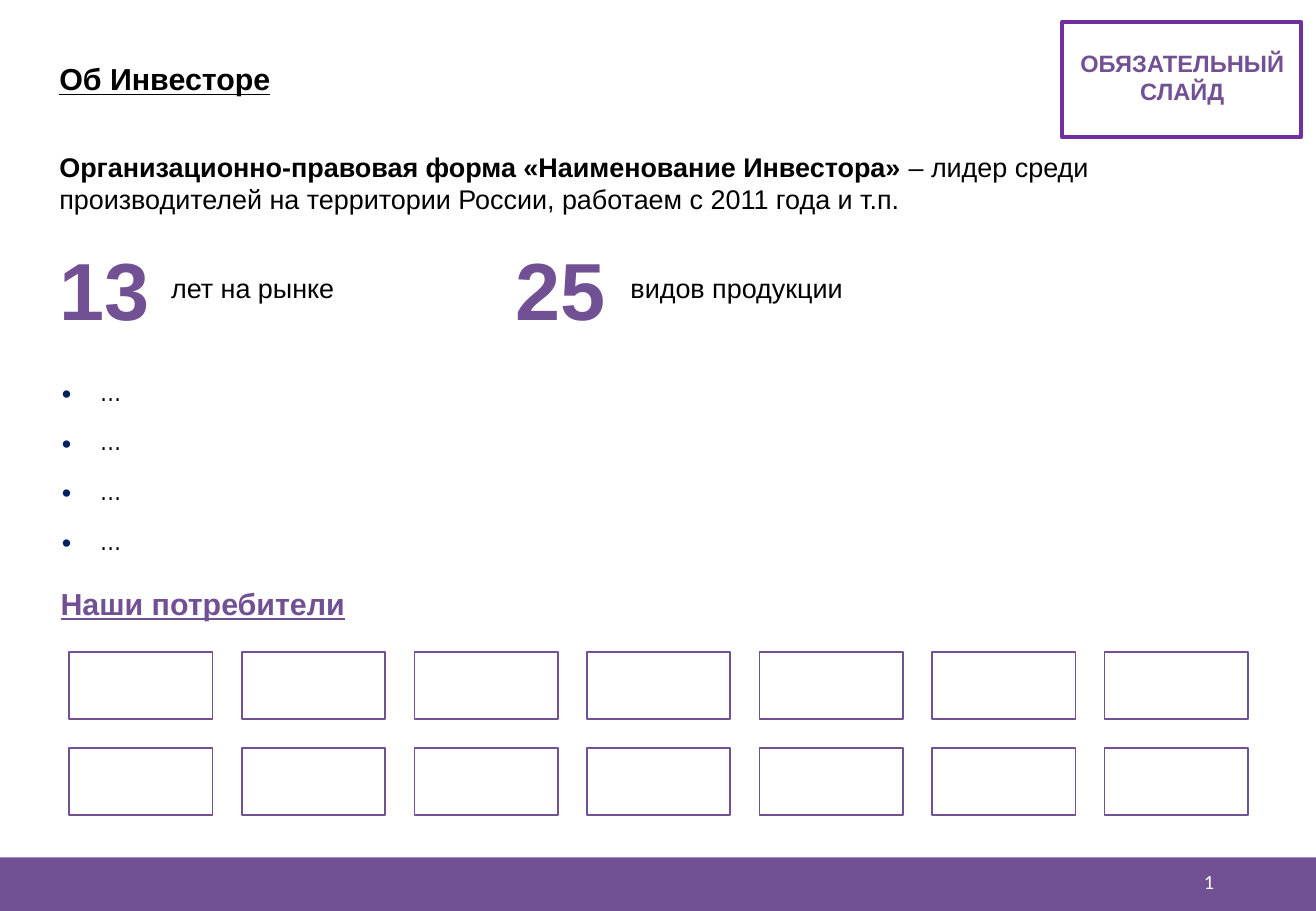
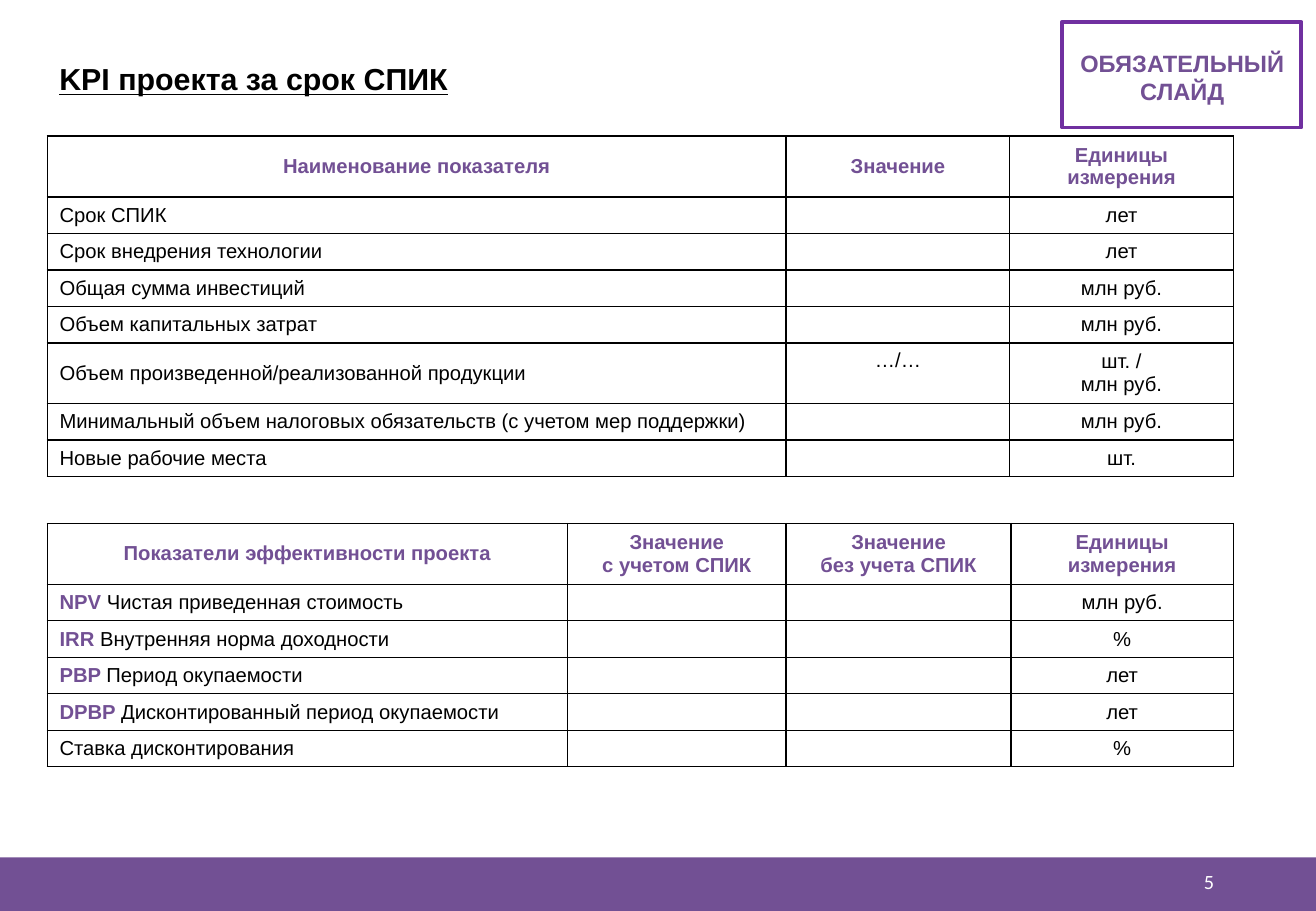
"""Build two investor slides: company profile and project KPIs."""
from dataclasses import dataclass

import lxml.etree
import pptx
import pptx.dml.color
import pptx.enum.shapes
import pptx.enum.text
import pptx.oxml.ns
import pptx.slide
import pptx.table
import pptx.text.text
import pptx.util

Inches = pptx.util.Inches
Pt = pptx.util.Pt
Align = pptx.enum.text.PP_ALIGN
Anchor = pptx.enum.text.MSO_ANCHOR
qn = pptx.oxml.ns.qn

COLORS = {
    "brand": "725094",
    "badge": "7030A0",
    "bullet": "002060",
    "text": "000000",
    "white": "FFFFFF",
}
PLAIN_TABLE_STYLE = "{2D5ABB26-0587-4C30-8999-92F81FD0307C}"
PAGE_WIDTH, PAGE_HEIGHT = 10.83, 7.5
FOOTER_TOP, FOOTER_HEIGHT = 7.06, 0.44
ROW_HEIGHT, TALL_ROW_HEIGHT = 0.3, 0.5


@dataclass(frozen=True)
class Area:
    left: float
    top: float
    width: float
    height: float

    def lengths(self) -> tuple[int, ...]:
        return tuple(Inches(n) for n in (self.left, self.top, self.width, self.height))


@dataclass(frozen=True)
class Style:
    size: float
    color: str = "text"
    bold: bool = False
    underline: bool = False
    align: Align = Align.LEFT
    name: str = "Arial"


@dataclass(frozen=True)
class Span:
    text: str
    color: str
    bold: bool


@dataclass(frozen=True)
class Fact:
    number: str
    label: str
    left: float
    label_left: float


@dataclass(frozen=True)
class KpiTable:
    left: float
    top: float
    columns: tuple[float, ...]
    rows: tuple[tuple[str, ...], ...]


TITLE = Style(18, bold=True, underline=True)
SUBTITLE = Style(18, "brand", bold=True, underline=True)
BODY = Style(16)
NUMBER = Style(48, "brand", bold=True)
BADGE = Style(14, "brand", bold=True, align=Align.CENTER)
PAGE_NUMBER = Style(12, "white", align=Align.RIGHT, name="Calibri")
BULLET = Style(16, name="Arial Narrow")
HEADER_CELL = Style(12, "brand", bold=True, align=Align.CENTER)
LABEL_CELL = Style(12)
VALUE_CELL = Style(12, align=Align.CENTER)

FACTS = (
    Fact("13", "лет на рынке", 0.39, 1.31),
    Fact("25", "видов продукции", 4.14, 5.09),
)
INTRO = (
    Span("Организационно-правовая форма «Наименование Инвестора» ", "text", True),
    Span("– лидер среди производителей на территории России, "
         "работаем с 2011 года и т.п.", "text", False),
)
ABBREVIATIONS = ("NPV", "IRR", "PBP", "DPBP")
KPI_TABLES = (
    KpiTable(0.39, 1.12, (6.08, 1.84, 1.84), (
        ("Наименование показателя", "Значение", "Единицы измерения"),
        ("Срок СПИК", "", "лет"),
        ("Срок внедрения технологии", "", "лет"),
        ("Общая сумма инвестиций", "", "млн руб."),
        ("Объем капитальных затрат", "", "млн руб."),
        ("Объем произведенной/реализованной продукции", "…/…", "шт. /\nмлн руб."),
        ("Минимальный объем налоговых обязательств (с учетом мер поддержки)",
         "", "млн руб."),
        ("Новые рабочие места", "", "шт."),
    )),
    KpiTable(0.39, 4.31, (4.28, 1.8, 1.85, 1.83), (
        ("Показатели эффективности проекта", "Значение\nс учетом СПИК",
         "Значение\nбез учета СПИК", "Единицы измерения"),
        ("NPV Чистая приведенная стоимость", "", "", "млн руб."),
        ("IRR Внутренняя норма доходности", "", "", "%"),
        ("PBP Период окупаемости", "", "", "лет"),
        ("DPBP Дисконтированный период окупаемости", "", "", "лет"),
        ("Ставка дисконтирования", "", "", "%"),
    )),
)


def rgb(color: str) -> pptx.dml.color.RGBColor:
    return pptx.dml.color.RGBColor.from_string(COLORS[color])


def style_para(para: pptx.text.text._Paragraph, style: Style) -> None:
    para.alignment = style.align
    para.font.name = style.name
    para.font.size = Pt(style.size)
    para.font.bold = style.bold
    para.font.underline = style.underline
    para.font.color.rgb = rgb(style.color)


def write_text(frame: pptx.text.text.TextFrame, text: str, style: Style) -> None:
    frame.text = text
    for para in frame.paragraphs:
        style_para(para, style)


def write_spans(frame: pptx.text.text.TextFrame, spans: tuple[Span, ...],
                style: Style) -> None:
    para = frame.paragraphs[0]
    style_para(para, style)
    for span in spans:
        run = para.add_run()
        run.text = span.text
        run.font.bold = span.bold
        run.font.color.rgb = rgb(span.color)


def add_text(page: pptx.slide.Slide, area: Area, text: str, style: Style,
             wrap: bool = True) -> pptx.text.text.TextFrame:
    frame = page.shapes.add_textbox(*area.lengths()).text_frame
    frame.word_wrap = wrap
    write_text(frame, text, style)
    return frame


def add_box(page: pptx.slide.Slide, area: Area, fill: str = "",
            line: str = "", weight: float = 1) -> None:
    box = page.shapes.add_shape(
        pptx.enum.shapes.MSO_SHAPE.RECTANGLE, *area.lengths())
    box.shadow.inherit = False
    if fill:
        box.fill.solid()
        box.fill.fore_color.rgb = rgb(fill)
    else:
        box.fill.background()
    if line:
        box.line.color.rgb = rgb(line)
        box.line.width = Pt(weight)
    else:
        box.line.fill.background()


def add_page(deck: pptx.presentation.Presentation, title: str, number: str,
             badge_height: float) -> pptx.slide.Slide:
    page = deck.slides.add_slide(deck.slide_layouts[6])
    add_box(page, Area(0, FOOTER_TOP, PAGE_WIDTH, FOOTER_HEIGHT), fill="brand")
    frame = add_text(page, Area(7.65, FOOTER_TOP, 2.44, 0.4), number, PAGE_NUMBER)
    frame.vertical_anchor = Anchor.MIDDLE
    add_text(page, Area(0.39, 0.45, 7.47, 0.4), title, TITLE)
    add_box(page, Area(8.74, 0.18, 1.97, badge_height), line="badge", weight=2.25)
    add_text(page, Area(8.78, 0.35, 1.9, 0.57), "ОБЯЗАТЕЛЬНЫЙ\nСЛАЙД", BADGE, wrap=False)
    return page


def add_plain_table(page: pptx.slide.Slide, left: float, top: float,
                    columns: tuple[float, ...],
                    rows: tuple[float, ...]) -> pptx.table.Table:
    area = Area(left, top, sum(columns), sum(rows))
    table = page.shapes.add_table(len(rows), len(columns), *area.lengths()).table
    table._tbl.tblPr.find(qn("a:tableStyleId")).text = PLAIN_TABLE_STYLE
    table.first_row = table.horz_banding = False
    for column, width in zip(table.columns, columns):
        column.width = Inches(width)
    for row, height in zip(table.rows, rows):
        row.height = Inches(height)
    for cell in table.iter_cells():
        cell.fill.background()
    return table


def set_borders(cell: pptx.table._Cell) -> None:
    properties = cell._tc.get_or_add_tcPr()
    for position, side in enumerate(("a:lnL", "a:lnR", "a:lnT", "a:lnB")):
        line = lxml.etree.Element(qn(side), w=str(Pt(1)))
        fill = lxml.etree.SubElement(line, qn("a:solidFill"))
        lxml.etree.SubElement(fill, qn("a:srgbClr"), val=COLORS["text"])
        properties.insert(position, line)


def set_bullet(para: pptx.text.text._Paragraph) -> None:
    properties = para._p.get_or_add_pPr()
    properties.set("marL", str(Inches(0.31)))
    properties.set("indent", str(Inches(-0.31)))
    color = lxml.etree.Element(qn("a:buClr"))
    lxml.etree.SubElement(color, qn("a:srgbClr"), val=COLORS["bullet"])
    font = lxml.etree.Element(qn("a:buFont"), typeface="Arial")
    mark = lxml.etree.Element(qn("a:buChar"), char="•")
    for position, element in enumerate((color, font, mark)):
        properties.insert(position, element)


def add_bullets(page: pptx.slide.Slide) -> None:
    table = add_plain_table(page, 0.41, 3.09, (10.25,), (0.41,) * 4)
    for cell in table.iter_cells():
        write_text(cell.text_frame, "…", BULLET)
        set_bullet(cell.text_frame.paragraphs[0])


def add_kpi_table(page: pptx.slide.Slide, kpi: KpiTable) -> None:
    heights = tuple(
        TALL_ROW_HEIGHT if index == 0 or any("\n" in text for text in row) else ROW_HEIGHT
        for index, row in enumerate(kpi.rows))
    table = add_plain_table(page, kpi.left, kpi.top, kpi.columns, heights)
    for row_index, row in enumerate(kpi.rows):
        for column_index, text in enumerate(row):
            cell = table.cell(row_index, column_index)
            set_borders(cell)
            cell.vertical_anchor = Anchor.TOP if text == "…/…" else Anchor.MIDDLE
            code, _, label = text.partition(" ")
            if code in ABBREVIATIONS:
                spans = (Span(code + " ", "brand", True), Span(label, "text", False))
                write_spans(cell.text_frame, spans, LABEL_CELL)
            elif row_index == 0:
                write_text(cell.text_frame, text, HEADER_CELL)
            else:
                write_text(cell.text_frame, text,
                           VALUE_CELL if column_index else LABEL_CELL)


def add_investor_page(deck: pptx.presentation.Presentation) -> None:
    page = add_page(deck, "Об Инвесторе", "1", 0.95)
    intro = add_text(page, Area(0.39, 1.19, 10.05, 0.64), "", BODY)
    write_spans(intro, INTRO, BODY)
    for fact in FACTS:
        add_text(page, Area(fact.left, 1.92, 1.02, 0.91), fact.number, NUMBER)
        add_text(page, Area(fact.label_left, 2.19, 2.79, 0.37), fact.label, BODY)
    add_bullets(page)
    add_text(page, Area(0.4, 4.77, 3.27, 0.4), "Наши потребители", SUBTITLE)
    for row in range(2):
        for column in range(7):
            customer = Area(0.57 + 1.42 * column, 5.37 + 0.79 * row, 1.18, 0.55)
            add_box(page, customer, line="brand")


def add_kpi_page(deck: pptx.presentation.Presentation) -> None:
    page = add_page(deck, "KPI проекта за срок СПИК", "5", 0.87)
    for kpi in KPI_TABLES:
        add_kpi_table(page, kpi)


def main() -> None:
    deck = pptx.Presentation()
    deck.slide_width = Inches(PAGE_WIDTH)
    deck.slide_height = Inches(PAGE_HEIGHT)
    add_investor_page(deck)
    add_kpi_page(deck)
    deck.save("out.pptx")


if __name__ == "__main__":
    main()
